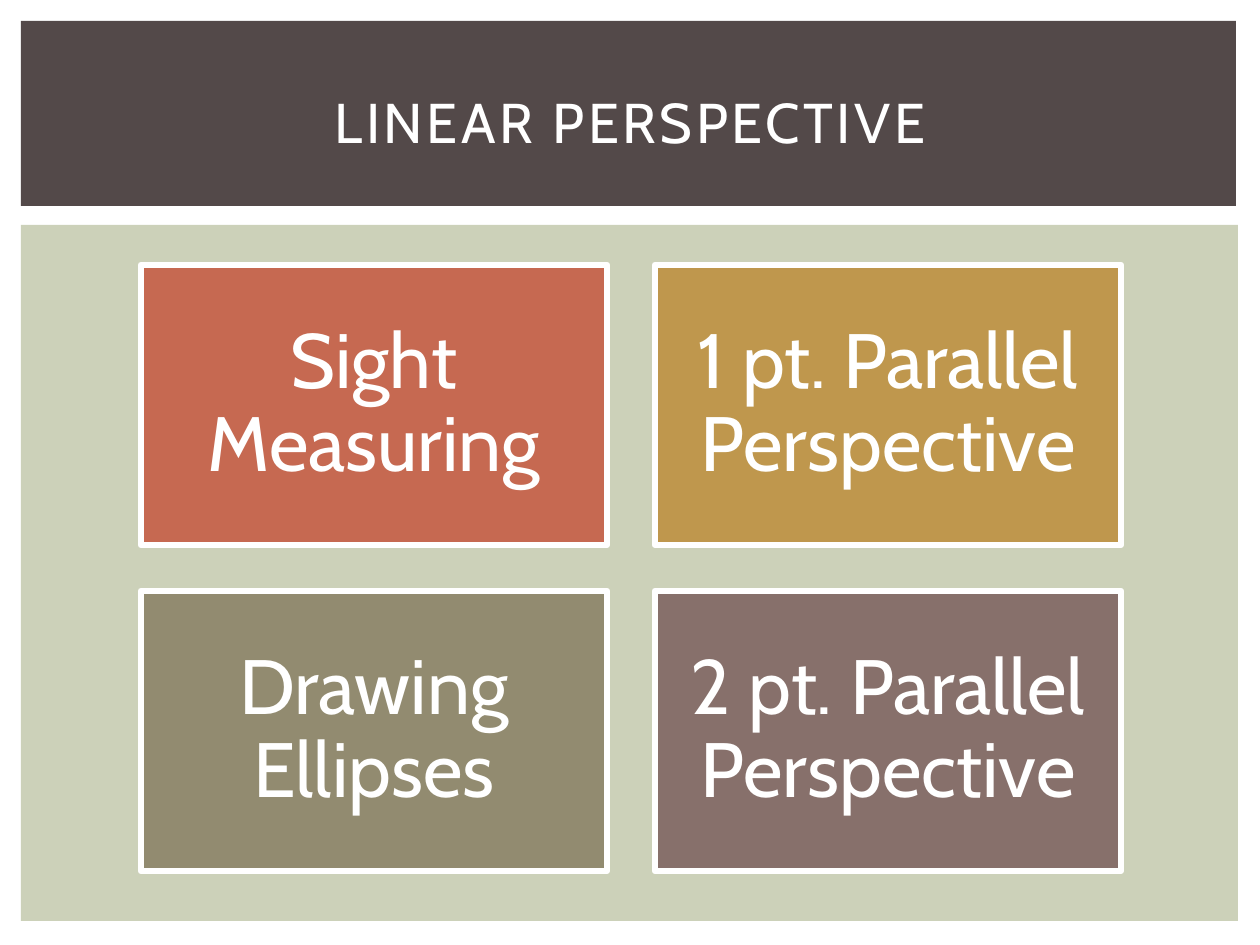
from dataclasses import dataclass

import pptx
import pptx.dml.color
import pptx.enum.shapes
import pptx.enum.text
import pptx.util

EMU_PER_PX = 914400 / 126


@dataclass(frozen=True)
class Theme:
    font: str = "Cabin"
    white: str = "FFFFFF"
    panel: str = "CCD1B9"
    header: str = "534949"
    title_size: int = 32
    title_spacing: int = 2
    tile_size: int = 44
    tile_border: float = 3.75


@dataclass(frozen=True)
class Box:
    left: int
    top: int
    width: int
    height: int


@dataclass(frozen=True)
class Topic:
    label: str
    color: str


THEME = Theme()
PANEL = Box(21, 225, 1217, 696)
HEADER = Box(21, 21, 1215, 185)
TITLE = Box(53, 49, 1155, 145)
FIRST_TILE = Box(141, 265, 466, 280)
COLUMN_STEP, ROW_STEP = 514, 326
COLUMNS = 2
TILE_INSET = 23

TOPICS = [
    Topic("Sight Measuring", "C66951"),
    Topic("1 pt. Parallel Perspective", "BF974D"),
    Topic("Drawing Ellipses", "928B70"),
    Topic("2 pt. Parallel Perspective", "87706B"),
]


def px(length: int) -> pptx.util.Emu:
    return pptx.util.Emu(round(length * EMU_PER_PX))


def rgb(color: str) -> pptx.dml.color.RGBColor:
    return pptx.dml.color.RGBColor.from_string(color)


def bounds(box: Box) -> list[pptx.util.Emu]:
    return [px(length) for length in (box.left, box.top, box.width, box.height)]


def add_rectangle(slide, box: Box, color: str):
    shape = slide.shapes.add_shape(
        pptx.enum.shapes.MSO_SHAPE.RECTANGLE, *bounds(box)
    )
    shape.shadow.inherit = False
    shape.fill.solid()
    shape.fill.fore_color.rgb = rgb(color)
    shape.line.fill.background()
    return shape


def add_centered_text(shape, text: str, size: int):
    """Fill the shape with one centred white run and return that run."""
    frame = shape.text_frame
    frame.word_wrap = True
    frame.vertical_anchor = pptx.enum.text.MSO_ANCHOR.MIDDLE
    paragraph = frame.paragraphs[0]
    paragraph.alignment = pptx.enum.text.PP_ALIGN.CENTER
    run = paragraph.add_run()
    run.text = text
    run.font.name = THEME.font
    run.font.size = pptx.util.Pt(size)
    run.font.color.rgb = rgb(THEME.white)
    return run


def add_title(slide, text: str) -> None:
    title = slide.shapes.add_textbox(*bounds(TITLE))
    run = add_centered_text(title, text, THEME.title_size)
    run._r.get_or_add_rPr().set("spc", str(THEME.title_spacing * 100))


def add_tile(slide, topic: Topic, index: int) -> None:
    row, column = divmod(index, COLUMNS)
    box = Box(
        FIRST_TILE.left + column * COLUMN_STEP,
        FIRST_TILE.top + row * ROW_STEP,
        FIRST_TILE.width,
        FIRST_TILE.height,
    )
    tile = add_rectangle(slide, box, topic.color)
    tile.line.color.rgb = rgb(THEME.white)
    tile.line.width = pptx.util.Pt(THEME.tile_border)
    add_centered_text(tile, topic.label, THEME.tile_size)
    frame = tile.text_frame
    frame.margin_left = frame.margin_right = px(TILE_INSET)
    frame.margin_top = frame.margin_bottom = px(TILE_INSET)
    frame.paragraphs[0].line_spacing = 0.9


def main() -> None:
    presentation = pptx.Presentation()
    presentation.slide_width = px(1260)
    presentation.slide_height = px(945)
    slide = presentation.slides.add_slide(presentation.slide_layouts[6])
    slide.background.fill.solid()
    slide.background.fill.fore_color.rgb = rgb(THEME.white)

    add_rectangle(slide, PANEL, THEME.panel)
    add_rectangle(slide, HEADER, THEME.header)
    for index, topic in enumerate(TOPICS):
        add_tile(slide, topic, index)
    add_title(slide, "LINEAR PERSPECTIVE")
    presentation.save("out.pptx")


if __name__ == "__main__":
    main()
